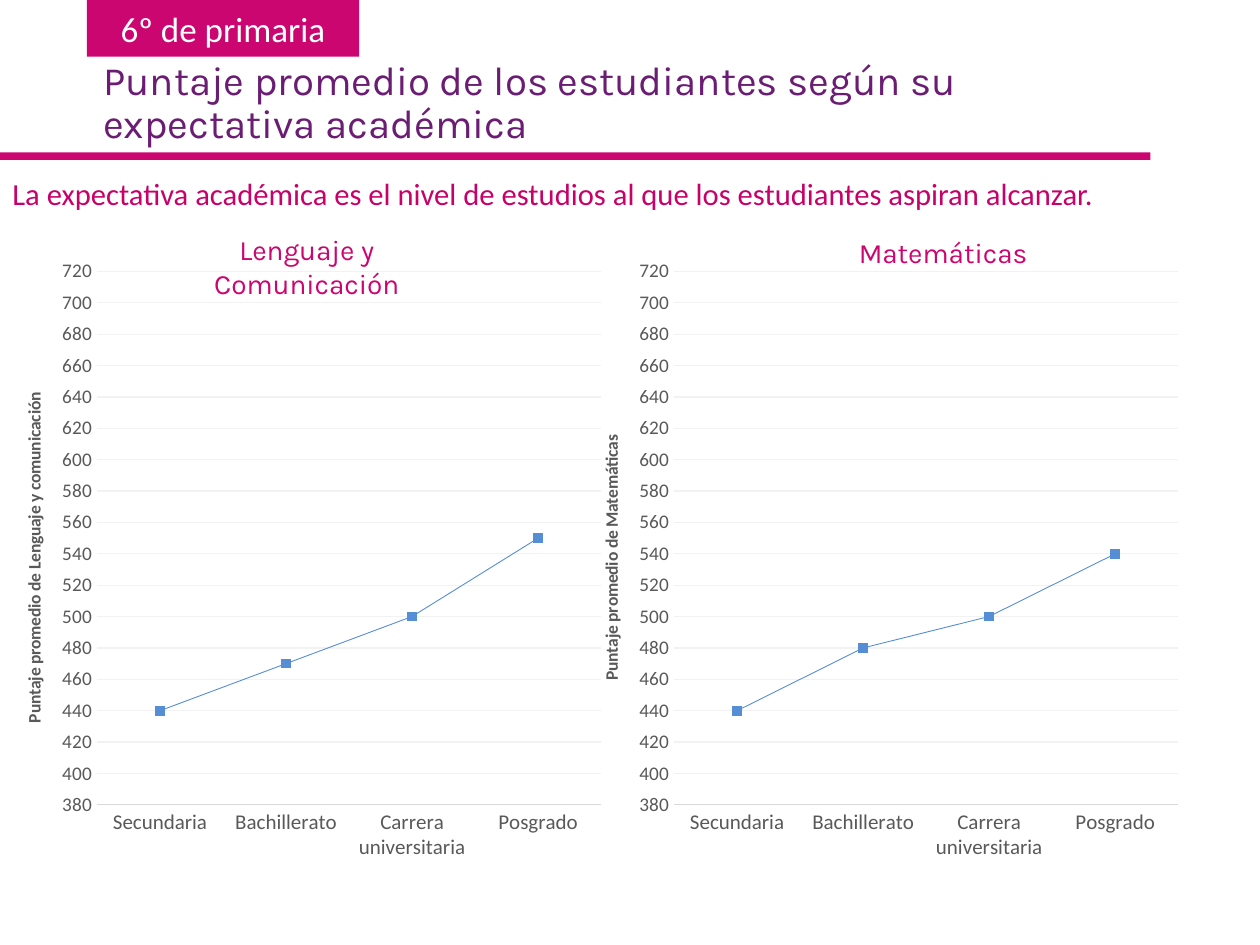
from lxml import etree
from pptx import Presentation
from pptx.chart.data import CategoryChartData
from pptx.dml.color import RGBColor
from pptx.enum.chart import XL_CHART_TYPE as ChartType, XL_MARKER_STYLE as Marker
from pptx.enum.chart import XL_TICK_MARK as TickMark
from pptx.enum.shapes import MSO_SHAPE as Shape
from pptx.enum.text import MSO_ANCHOR as Anchor, PP_ALIGN as Align
from pptx.oxml import parse_xml
from pptx.oxml.ns import nsdecls, qn
from pptx.util import Inches, Pt

MAGENTA, PURPLE, GRAY, BLUE = "CC0671", "6B1C73", "595959", "558ED5"
LEVELS = ["Secundaria", "Bachillerato", "Carrera universitaria", "Posgrado"]
# Plot area as fractions of the chart box
PLOT_LAYOUT = {"x": 0.16, "y": 0.02, "w": 0.82, "h": 0.87}


def rgb(color):
    return RGBColor.from_string(color)


def set_font(font, size, color, name="Calibri", bold=False):
    font.size = Pt(size)
    font.name = name
    font.bold = bold
    font.color.rgb = rgb(color)


def write(shape, text, size, color, name="Calibri", align=Align.LEFT):
    frame = shape.text_frame
    frame.word_wrap = True
    frame.text = text
    paragraph = frame.paragraphs[0]
    paragraph.alignment = align
    set_font(paragraph.runs[0].font, size, color, name)
    return paragraph


def add_bar(slide, box):
    bar = slide.shapes.add_shape(Shape.RECTANGLE, *map(Inches, box))
    bar.shadow.inherit = False
    bar.fill.solid()
    bar.fill.fore_color.rgb = rgb(MAGENTA)
    bar.line.fill.background()
    return bar


def add_text(slide, box, *args, **options):
    return write(slide.shapes.add_textbox(*map(Inches, box)), *args, **options)


def add_header(slide, left, top, width):
    # Grade tab, slide title and rule
    tab = add_bar(slide, (left, top, 2.16, 0.45))
    tab.text_frame.vertical_anchor = Anchor.MIDDLE
    write(tab, "6º de primaria", 20, "FFFFFF", align=Align.CENTER)
    title = add_text(slide, (left + 0.03, top + 0.43, width, 0.92),
                     "Puntaje promedio de los estudiantes según su expectativa académica",
                     23, PURPLE, "Karla")
    title.line_spacing = 0.9
    add_bar(slide, (0, top + 1.21, 9.13, 0.06))


def add_chart_heading(slide, box, text):
    heading = add_text(slide, box, text, 16, MAGENTA, "Karla", align=Align.CENTER)
    heading.space_before = Pt(10)


def format_category_axis(axis):
    axis.major_tick_mark = axis.minor_tick_mark = TickMark.NONE
    set_font(axis.tick_labels.font, 12, GRAY)
    axis.format.line.color.rgb = rgb("D9D9D9")
    axis.format.line.width = Pt(0.75)


def format_value_axis(axis, title):
    axis.minimum_scale, axis.maximum_scale, axis.major_unit = 380, 730, 20
    axis.major_tick_mark = axis.minor_tick_mark = TickMark.NONE
    set_font(axis.tick_labels.font, 11, GRAY)
    axis.format.line.fill.background()
    axis.major_gridlines.format.line.color.rgb = rgb("F2F2F2")
    axis.major_gridlines.format.line.width = Pt(0.75)
    frame = axis.axis_title.text_frame
    frame.text = title
    set_font(frame.paragraphs[0].runs[0].font, 10, GRAY, bold=True)
    body = axis.axis_title._element.find(".//" + qn("a:bodyPr"))
    body.set("rot", "-5400000")
    body.set("vert", "horz")


def format_series(series):
    series.smooth = False
    series.format.line.color.rgb = rgb(BLUE)
    series.format.line.width = Pt(0.5)
    marker = series.marker
    marker.style, marker.size = Marker.SQUARE, 5
    marker.format.fill.solid()
    marker.format.fill.fore_color.rgb = rgb(BLUE)
    marker.format.line.color.rgb = rgb(BLUE)


def set_plot_layout(chart):
    # Fixed inner plot area and a transparent chart background
    plot_area = chart._chartSpace.chart.plotArea
    for old_layout in plot_area.findall(qn("c:layout")):
        plot_area.remove(old_layout)
    layout = etree.Element(qn("c:layout"))
    manual = etree.SubElement(layout, qn("c:manualLayout"))
    settings = {"layoutTarget": "inner", "xMode": "edge", "yMode": "edge", **PLOT_LAYOUT}
    for tag, value in settings.items():
        etree.SubElement(manual, qn("c:" + tag)).set("val", str(value))
    plot_area.insert(0, layout)
    chart._chartSpace.chart.addnext(parse_xml(
        f'<c:spPr {nsdecls("c", "a")}><a:noFill/><a:ln><a:noFill/></a:ln></c:spPr>'))


def add_score_chart(slide, box, axis_title, scores):
    data = CategoryChartData()
    data.categories = LEVELS
    data.add_series("Puntaje promedio", scores)
    chart = slide.shapes.add_chart(ChartType.LINE_MARKERS, *map(Inches, box), data).chart
    chart.has_legend = False
    chart.has_title = False
    set_font(chart.font, 10, "000000")
    chart.plots[0].vary_by_categories = False
    format_category_axis(chart.category_axis)
    format_value_axis(chart.value_axis, axis_title)
    format_series(chart.plots[0].series[0])
    set_plot_layout(chart)


def main():
    presentation = Presentation()
    presentation.slide_width, presentation.slide_height = Inches(10), Inches(7.5)
    slide = presentation.slides.add_slide(presentation.slide_layouts[6])

    add_header(slide, 0.69, 0, 8.62)
    add_text(slide, (0, 1.34, 10, 0.4),
             "La expectativa académica es el nivel de estudios al que los estudiantes "
             "aspiran alcanzar.", 17.5, "C80069")

    # One heading and chart per subject
    subjects = [
        ("Lenguaje y Comunicación", (1.08, 1.8, 2.71, 0.43), -0.01,
         "Puntaje promedio de Lenguaje y comunicación", (440, 470, 500, 550)),
        ("Matemáticas", (6.13, 1.82, 2.71, 0.43), 4.57,
         "Puntaje promedio de Matemáticas", (440, 480, 500, 540)),
    ]
    for heading, heading_box, chart_left, axis_title, scores in subjects:
        add_chart_heading(slide, heading_box, heading)
        add_score_chart(slide, (chart_left, 1.93, 4.88, 5.01), axis_title, scores)

    presentation.save("out.pptx")


if __name__ == "__main__":
    main()
